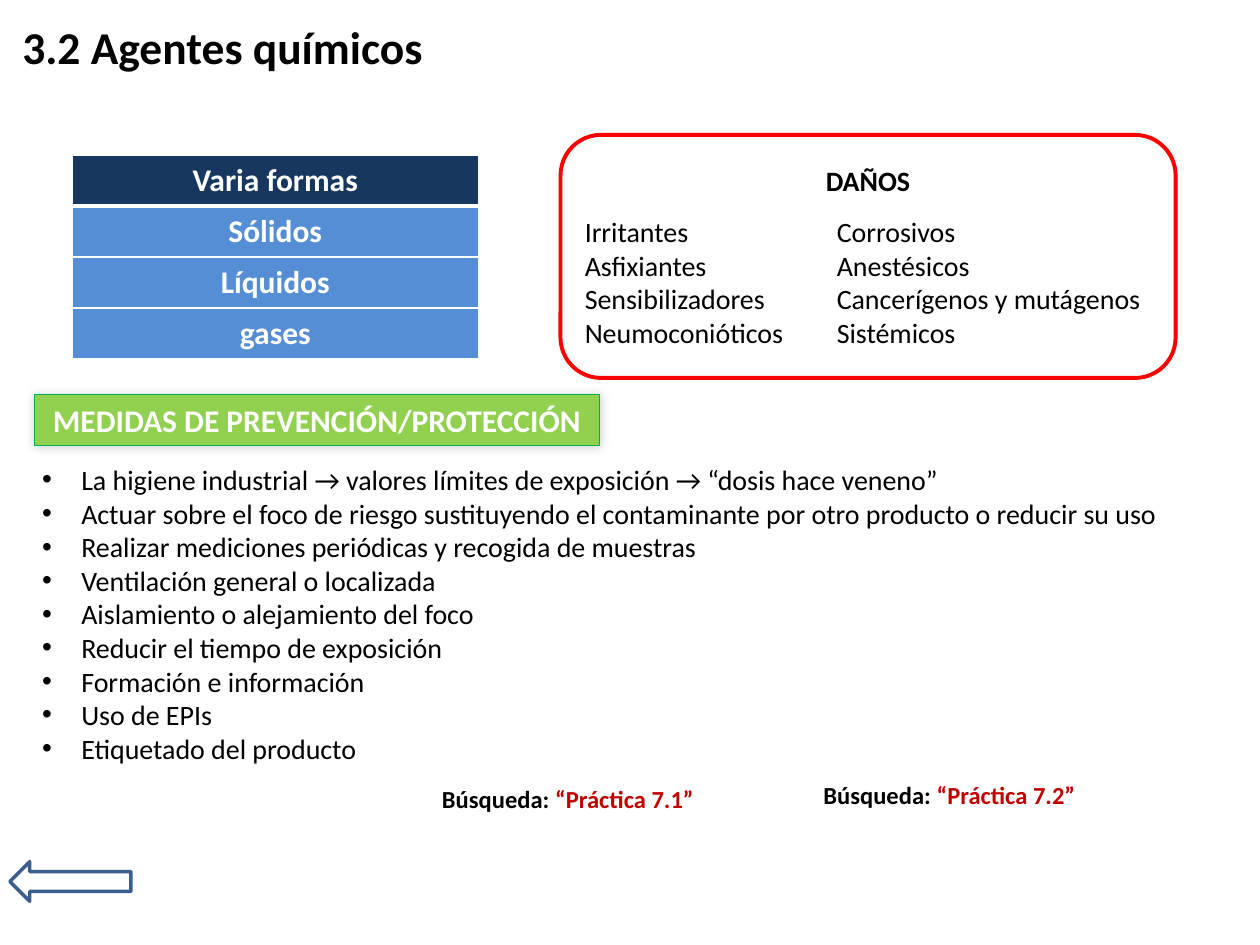
from lxml.etree import SubElement
from pptx import Presentation
from pptx.dml.color import RGBColor
from pptx.enum.shapes import MSO_SHAPE as SHAPE
from pptx.enum.text import MSO_ANCHOR as ANCHOR, PP_ALIGN as ALIGN
from pptx.oxml.ns import qn
from pptx.util import Cm, Pt

COLORS = {"black": "000000", "white": "FFFFFF", "red": "FF0000",
          "dark_red": "C00000", "lime": "92D050", "green": "00B050",
          "navy": "17375E", "blue": "558ED5", "steel": "3A5F8C"}


def rgb(name):
    return RGBColor.from_string(COLORS[name])


def style(p, size, color="black", bold=False, align=ALIGN.LEFT):
    p.alignment = align
    for r in p.runs:
        r.font.name = "Calibri"
        r.font.size = Pt(size)
        r.font.bold = bold
        r.font.color.rgb = rgb(color)


prs = Presentation()
prs.slide_width, prs.slide_height = Cm(25.4), Cm(19.05)
s = prs.slides.add_slide(prs.slide_layouts[6])

# Title
tf = s.shapes.add_textbox(Cm(0.2), Cm(0.13), Cm(25.2), Cm(1.6)).text_frame
tf.word_wrap = True
tf.vertical_anchor = ANCHOR.MIDDLE
tf.text = "3.2 Agentes químicos"
style(tf.paragraphs[0], 26, bold=True)

# Back arrow, heading bar and damage frame
shapes = []
for kind, x, y, w, h, fill, line, width in [
        (SHAPE.LEFT_ARROW, 0.2, 17.37, 2.44, 0.8, None, "steel", 2),
        (SHAPE.RECTANGLE, 0.7, 7.95, 11.38, 1.03, "lime", "green", 0.75),
        (SHAPE.ROUNDED_RECTANGLE, 11.3, 2.72, 12.4, 4.9, None, "red", 2.25)]:
    sp = s.shapes.add_shape(kind, Cm(x), Cm(y), Cm(w), Cm(h))
    sp.shadow.inherit = False
    if fill:
        sp.fill.solid()
        sp.fill.fore_color.rgb = rgb(fill)
    else:
        sp.fill.background()
    sp.line.color.rgb = rgb(line)
    sp.line.width = Pt(width)
    shapes.append(sp)
arrow, heading, damage = shapes

# Heading text and soft shadow
tf = heading.text_frame
tf.word_wrap = True
tf.vertical_anchor = ANCHOR.TOP
tf.text = "MEDIDAS DE PREVENCIÓN/PROTECCIÓN"
style(tf.paragraphs[0], 18, "white", True, ALIGN.CENTER)
effects = heading._element.spPr.find(qn("a:effectLst"))
shadow = SubElement(effects, qn("a:outerShdw"), blurRad=str(Pt(6)), dist="0")
tint = SubElement(shadow, qn("a:srgbClr"), val=COLORS["black"])
SubElement(tint, qn("a:alpha"), val="20000")

# Damage list in two tabbed columns
tf = damage.text_frame
tf.word_wrap = True
tf.vertical_anchor = ANCHOR.MIDDLE
tf.text = "DAÑOS"
tf.paragraphs[0].space_after = Pt(9.75)
style(tf.paragraphs[0], 16, bold=True, align=ALIGN.CENTER)
for left, right in [("Irritantes", "Corrosivos"),
                    ("Asfixiantes", "Anestésicos"),
                    ("Sensibilizadores", "Cancerígenos y mutágenos"),
                    ("Neumoconióticos", "Sistémicos")]:
    p = tf.add_paragraph()
    p.text = f"{left}\t{right}"
    tabs = SubElement(p._p.get_or_add_pPr(), qn("a:tabLst"))
    SubElement(tabs, qn("a:tab"), pos=str(Cm(5.08)), algn="l")
    style(p, 16)

# Prevention measures
tf = s.shapes.add_textbox(Cm(0.6), Cm(9.2), Cm(23.4), Cm(7.08)).text_frame
tf.word_wrap = True
measures = [
    "La higiene industrial → valores límites de exposición → “dosis hace veneno”",
    "Actuar sobre el foco de riesgo sustituyendo el contaminante por otro producto o reducir su uso",
    "Realizar mediciones periódicas y recogida de muestras",
    "Ventilación general o localizada",
    "Aislamiento o alejamiento del foco",
    "Reducir el tiempo de exposición",
    "Formación e información",
    "Uso de EPIs",
    "Etiquetado del producto",
]
tf.text = "\n".join(measures)
for p in tf.paragraphs:
    pPr = p._p.get_or_add_pPr()
    pPr.set("marL", str(Cm(0.79)))
    pPr.set("indent", str(-Cm(0.79)))
    SubElement(pPr, qn("a:buFont"), typeface="Arial")
    SubElement(pPr, qn("a:buChar"), char="•")
    style(p, 16)

# Search exercises
for x, y, name in [(15.29, 15.6, "“Práctica 7.2”"),
                   (7.6, 15.68, "“Práctica 7.1”")]:
    tf = s.shapes.add_textbox(Cm(x), Cm(y), Cm(7.7), Cm(0.86)).text_frame
    tf.word_wrap = True
    p = tf.paragraphs[0]
    p.text = "Búsqueda:"
    p.add_run().text = f" {name}"
    style(p, 14, bold=True, align=ALIGN.CENTER)
    p.runs[1].font.color.rgb = rgb("dark_red")

# Table of forms
forms = ["Varia formas", "Sólidos", "Líquidos", "gases"]
row_h = Cm(1.03)
table = s.shapes.add_table(len(forms), 1, Cm(1.45), Cm(3.12),
                           Cm(8.2), row_h * len(forms)).table
for i, form in enumerate(forms):
    table.rows[i].height = row_h
    cell = table.cell(i, 0)
    cell.text = form
    style(cell.text_frame.paragraphs[0], 18, "white", True, ALIGN.CENTER)
    tcPr = cell._tc.get_or_add_tcPr()
    for side in "LRTB":
        thick = (i, side) in [(0, "B"), (1, "T")]
        ln = SubElement(tcPr, qn(f"a:ln{side}"), w=str(Pt(3 if thick else 1)))
        SubElement(SubElement(ln, qn("a:solidFill")), qn("a:srgbClr"),
                   val=COLORS["white"])
    cell.fill.solid()
    cell.fill.fore_color.rgb = rgb("blue" if i else "navy")

prs.save("out.pptx")
